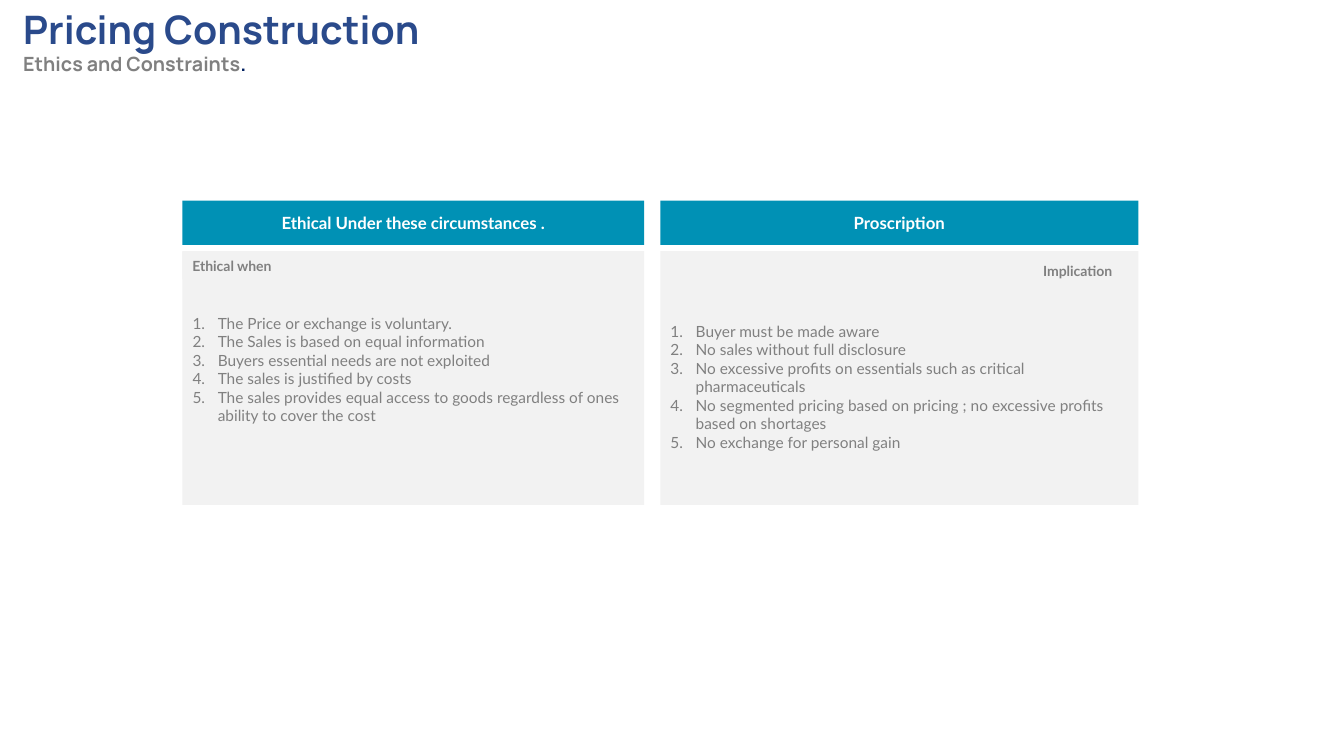
import pptx
import pptx.util
import pptx.dml.color
import pptx.enum.text
import pptx.enum.shapes
import lxml.etree

Inches, Pt = pptx.util.Inches, pptx.util.Pt
ALIGN = pptx.enum.text.PP_ALIGN
ANCHOR = pptx.enum.text.MSO_ANCHOR

TITLE = "Pricing Construction"
SUBTITLE = ("Ethics and Constraints", ".")
COLUMNS = [
    {
        "head": "Ethical Under these circumstances .",
        "label": "Ethical when",
        "items": [
            "The Price or exchange is voluntary.",
            "The Sales is based on equal information",
            "Buyers essential needs are not exploited",
            "The sales is justified by costs",
            "The sales provides equal access to goods regardless of ones "
            "ability to cover the cost",
        ],
        "left": 1.81, "width": 4.58,
        "label_box": (1.81, 2.5, 2.32, 0.27), "align": ALIGN.LEFT,
        "insets": (0.05, 0.22),
    },
    {
        "head": "Proscription",
        "label": "Implication",
        "items": [
            "Buyer must be made aware",
            "No sales without full disclosure",
            "No excessive profits on essentials such as critical pharmaceuticals",
            "No segmented pricing based on pricing ; no excessive profits "
            "based on shortages",
            "No exchange for personal gain",
        ],
        "left": 6.55, "width": 4.74,
        "label_box": (6.58, 2.5, 4.55, 0.37), "align": ALIGN.RIGHT,
        "insets": (0.22, 0.05),
    },
]
HEAD_TOP, HEAD_HIGH = 1.99, 0.44
LIST_TOP, LIST_HIGH = 2.49, 2.52


class Theme:
    text, display = "Lato", "Manrope"
    navy, dark, teal = "2A4A8B", "002060", "0091B5"
    gray, panel, white = "808080", "F2F2F2", "FFFFFF"
    title, subtitle, head, item, label = 28, 14, 12, 11, 10


def color(code):
    return pptx.dml.color.RGBColor.from_string(code)


def place(shape, left, top, width, height, fill=None):
    shape.left, shape.top = Inches(left), Inches(top)
    shape.width, shape.height = Inches(width), Inches(height)
    if fill:
        shape.fill.solid()
        shape.fill.fore_color.rgb = color(fill)


def frame(shape, anchor, top=0.05, bottom=0.05):
    body = shape.text_frame
    body.word_wrap = True
    body.auto_size = pptx.enum.text.MSO_AUTO_SIZE.NONE
    body.vertical_anchor = anchor
    body.margin_left = body.margin_right = Inches(0.1)
    body.margin_top, body.margin_bottom = Inches(top), Inches(bottom)
    return body


def style(para, size, shade, bold=False, face=Theme.text, align=ALIGN.LEFT):
    para.alignment = align
    para.space_before = Pt(0)
    para.font.name, para.font.size = face, Pt(size)
    para.font.bold = bold
    para.font.color.rgb = color(shade)


def number(para):
    """Give the paragraph an automatic number and a hanging indent."""
    props = para._p.get_or_add_pPr()
    props.set("marL", str(Inches(0.25)))
    props.set("indent", str(-Inches(0.25)))
    space = "{http://schemas.openxmlformats.org/drawingml/2006/main}"
    lxml.etree.SubElement(props, space + "buFontTx")
    lxml.etree.SubElement(props, space + "buAutoNum", type="arabicPeriod")


def add_title(slide):
    shape = slide.shapes.title
    place(shape, 0.13, 0, 10.53, 0.81)
    body = frame(shape, ANCHOR.TOP)
    first = body.paragraphs[0]
    first.text = TITLE
    style(first, Theme.title, Theme.navy, True, Theme.display)
    second = body.add_paragraph()
    for words in SUBTITLE:
        second.add_run().text = words
    style(second, Theme.subtitle, Theme.gray, True, Theme.display)
    second.runs[-1].font.color.rgb = color(Theme.dark)


def add_column(slide, column, head, panel):
    left, width = column["left"], column["width"]
    place(head, left, HEAD_TOP, width, HEAD_HIGH, Theme.teal)
    para = frame(head, ANCHOR.MIDDLE).paragraphs[0]
    para.text = column["head"]
    style(para, Theme.head, Theme.white, True, align=ALIGN.CENTER)

    place(panel, left, LIST_TOP, width, LIST_HIGH, Theme.panel)
    body = frame(panel, ANCHOR.MIDDLE, *column["insets"])
    body.text = "\n".join(column["items"])
    for para in body.paragraphs:
        number(para)
        style(para, Theme.item, Theme.gray)

    box = [Inches(n) for n in column["label_box"]]
    label = slide.shapes.add_shape(pptx.enum.shapes.MSO_SHAPE.RECTANGLE, *box)
    place(label, *column["label_box"], Theme.panel)
    label.line.fill.background()
    label.shadow.inherit = False
    para = frame(label, ANCHOR.MIDDLE).paragraphs[0]
    para.text = column["label"]
    style(para, Theme.label, Theme.gray, True, align=column["align"])


def main():
    deck = pptx.Presentation()
    deck.slide_width, deck.slide_height = Inches(13.33), Inches(7.5)
    slide = deck.slides.add_slide(deck.slide_layouts.get_by_name("Comparison"))
    add_title(slide)
    holders = list(slide.placeholders)[1:]
    for column, head, panel in zip(COLUMNS, holders[::2], holders[1::2]):
        add_column(slide, column, head, panel)
    deck.save("out.pptx")


if __name__ == "__main__":
    main()
